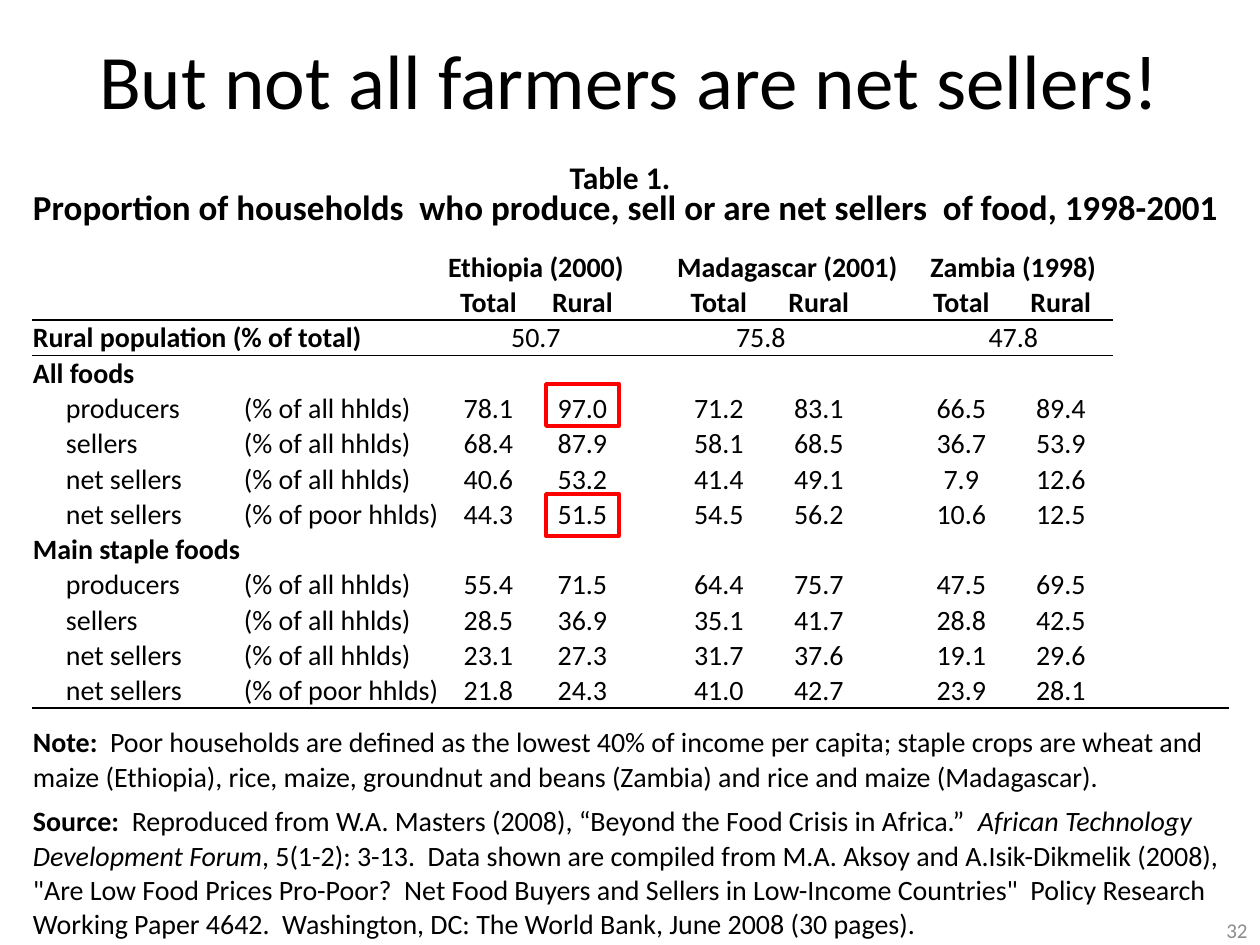
import pptx
import pptx.dml.color
import pptx.enum.shapes
import pptx.enum.text
import pptx.oxml
import pptx.oxml.ns
import pptx.util

PX = 914400 / 126
COLORS = {"ink": "000000", "number": "8C8C8C", "highlight": "FF0000"}
ALIGN = pptx.enum.text.PP_ALIGN
ANCHOR = pptx.enum.text.MSO_ANCHOR
NO_STYLE = "{2D5ABB26-0587-4C30-8999-92F81FD0307C}"

COLUMN_WIDTHS = [33, 178, 199, 93, 95, 31, 116, 84, 53, 95, 104, 116]
ROW_HEIGHTS = [44, 55] + [35] * 12 + [217]
VALUE_COLUMNS = [3, 4, 6, 7, 9, 10]
PAIR_COLUMNS = VALUE_COLUMNS[::2]

HEADING = "Proportion of households  who produce, sell or are net sellers  of food, 1998-2001"
COUNTRIES = [("Ethiopia (2000)", 2), ("Madagascar (2001)", 3), ("Zambia (1998)", 2)]
RURAL_SHARES = ["50.7", "75.8", "47.8"]
LINES = [
    ("producers", "(% of all hhlds)"),
    ("sellers", "(% of all hhlds)"),
    ("net sellers", "(% of all hhlds)"),
    ("net sellers", "(% of poor hhlds)"),
]
GROUPS = [
    (4, "All foods", [
        "78.1 97.0 71.2 83.1 66.5 89.4",
        "68.4 87.9 58.1 68.5 36.7 53.9",
        "40.6 53.2 41.4 49.1 7.9 12.6",
        "44.3 51.5 54.5 56.2 10.6 12.5",
    ]),
    (9, "Main staple foods", [
        "55.4 71.5 64.4 75.7 47.5 69.5",
        "28.5 36.9 35.1 41.7 28.8 42.5",
        "23.1 27.3 31.7 37.6 19.1 29.6",
        "21.8 24.3 41.0 42.7 23.9 28.1",
    ]),
]
FOOTNOTES = [
    [
        ("Note:", {"bold": True}),
        ("  Poor households are defined as the lowest 40% of income per capita; "
         "staple crops are wheat and maize (Ethiopia), rice, maize, groundnut and "
         "beans (Zambia) and rice and maize (Madagascar).", {}),
    ],
    [
        ("Source:  ", {"bold": True}),
        ("Reproduced from W.A. Masters (2008), “Beyond the Food Crisis in Africa.”  ", {}),
        ("African Technology Development Forum", {"italic": True}),
        (", 5(1-2): 3-13.  Data shown are compiled from M.A. Aksoy and A.Isik-Dikmelik "
         '(2008), "Are Low Food Prices Pro-Poor?  Net Food Buyers and Sellers in '
         'Low-Income Countries"  Policy Research Working Paper 4642.  Washington, DC: '
         "The World Bank, June 2008 (30 pages).", {}),
    ],
]


def px(length):
    """Turn px into EMU."""
    return pptx.util.Emu(round(length * PX))


def apply(target, values):
    """Set each named attribute on the target."""
    for name, value in values.items():
        setattr(target, name, value)


def add_span(para, text, size, color="ink", **formats):
    """Append one formatted run to a paragraph."""
    span = para.add_run()
    span.text = text
    values = {"name": "Calibri", "size": pptx.util.Pt(size), "bold": False, "italic": False}
    apply(span.font, {**values, **formats})
    span.font.color.rgb = pptx.dml.color.RGBColor.from_string(COLORS[color])


def add_label(page, box, text, size, align=ALIGN.CENTER, **formats):
    """Place one line of text in the middle of a box."""
    frame = page.shapes.add_textbox(*map(px, box)).text_frame
    apply(frame, {"word_wrap": True, "vertical_anchor": ANCHOR.MIDDLE})
    frame.paragraphs[0].alignment = align
    add_span(frame.paragraphs[0], text, size, **formats)


def add_highlight(page, box):
    """Outline a box in the highlight colour."""
    frame = page.shapes.add_shape(pptx.enum.shapes.MSO_SHAPE.RECTANGLE, *map(px, box))
    frame.shadow.inherit = False
    frame.fill.background()
    frame.line.color.rgb = pptx.dml.color.RGBColor.from_string(COLORS["highlight"])
    frame.line.width = pptx.util.Pt(2)


def write_cell(table, row, column, text, width=1, size=16, align=ALIGN.CENTER, **formats):
    """Write text in a cell that spans the given number of columns."""
    cell = table.cell(row, column)
    if width > 1:
        cell.merge(table.cell(row, column + width - 1))
    para = cell.text_frame.paragraphs[0]
    para.alignment = align
    add_span(para, text, size, **formats)


def draw_rule(table, row, count):
    """Rule the line below a row across the first columns."""
    for column in range(count):
        for line_row, side in ((row, "lnB"), (row + 1, "lnT")):
            line = pptx.oxml.parse_xml(
                f'<a:{side} {pptx.oxml.ns.nsdecls("a")} w="12700"><a:solidFill>'
                f'<a:srgbClr val="{COLORS["ink"]}"/></a:solidFill></a:{side}>')
            table.cell(line_row, column)._tc.get_or_add_tcPr().insert(0, line)


def prepare_table(page, box):
    """Add a plain table with the column and row sizes of this slide."""
    frame = page.shapes.add_table(len(ROW_HEIGHTS), len(COLUMN_WIDTHS), *map(px, box))
    table = frame.table
    apply(table, {"first_row": False, "horz_banding": False})
    table._tbl.tblPr.find(pptx.oxml.ns.qn("a:tableStyleId")).text = NO_STYLE
    for column, width in zip(table.columns, COLUMN_WIDTHS):
        column.width = px(width)
    for row, height in zip(table.rows, ROW_HEIGHTS):
        row.height = px(height)
    margins = {f"margin_{side}": px(1) for side in ("left", "right", "top")}
    for cell in table.iter_cells():
        apply(cell, {**margins, "margin_bottom": 0, "vertical_anchor": ANCHOR.BOTTOM})
        cell.fill.background()
        cell.text_frame.paragraphs[0]._p.get_or_add_endParaRPr().set("sz", "1600")
    return table


def write_footnotes(table, row):
    """Write the note and the source across the last row."""
    cell = table.cell(row, 0)
    cell.merge(table.cell(row, len(COLUMN_WIDTHS) - 1))
    apply(cell, {"vertical_anchor": ANCHOR.TOP, "margin_top": px(18)})
    frame = cell.text_frame
    for index, spans in enumerate(FOOTNOTES):
        para = frame.add_paragraph() if index else frame.paragraphs[0]
        para.space_after = pptx.util.Pt(6)
        for text, formats in spans:
            add_span(para, text, 16, **formats)


def add_household_table(page, box):
    """Build the table of producing and selling households."""
    table = prepare_table(page, box)
    left_bold = {"align": ALIGN.LEFT, "bold": True}
    write_cell(table, 0, 0, HEADING, len(COLUMN_WIDTHS), 20, **left_bold)
    for column, (country, width) in zip(PAIR_COLUMNS, COUNTRIES):
        write_cell(table, 1, column, country, width, bold=True)
    for column, title in zip(VALUE_COLUMNS, ["Total", "Rural"] * 3):
        write_cell(table, 2, column, title, bold=True)
    write_cell(table, 3, 0, "Rural population (% of total)", 3, **left_bold)
    for column, share in zip(PAIR_COLUMNS, RURAL_SHARES):
        write_cell(table, 3, column, share, 2)
    for top, title, records in GROUPS:
        write_cell(table, top, 0, title, 2, **left_bold)
        for row, (labels, record) in enumerate(zip(LINES, records), top + 1):
            for column, label in enumerate(labels, 1):
                write_cell(table, row, column, label, align=ALIGN.LEFT)
            for column, value in zip(VALUE_COLUMNS, record.split()):
                write_cell(table, row, column, value)
    write_footnotes(table, 14)
    draw_rule(table, 2, 11)
    draw_rule(table, 13, 12)


def main():
    """Build and save the slide."""
    deck = pptx.Presentation()
    apply(deck, {"slide_width": px(1260), "slide_height": px(945)})
    page = deck.slides.add_slide(deck.slide_layouts[6])
    add_household_table(page, (32, 186, 1197, 746))
    add_label(page, (53, 158, 1134, 38), "Table 1.", 18, bold=True)
    add_label(page, (0, 0, 1260, 158), "But not all farmers are net sellers!", 44)
    add_label(page, (966, 905, 294, 50), "32", 12, ALIGN.RIGHT, color="number")
    for top in (384, 494):
        add_highlight(page, (546, top, 73, 42))
    deck.save("out.pptx")


if __name__ == "__main__":
    main()
